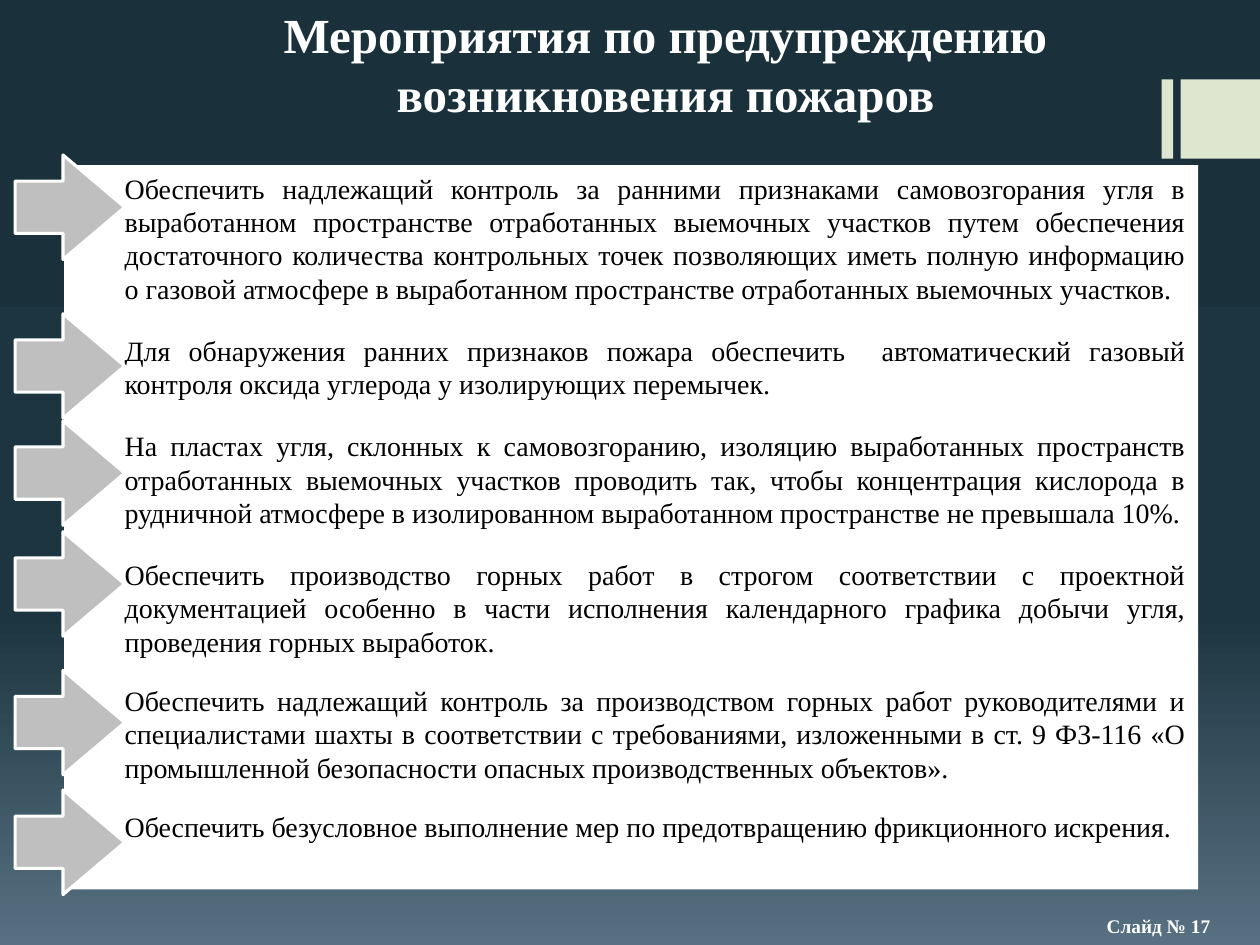
from copy import deepcopy

from pptx import Presentation
from pptx.dml.color import RGBColor
from pptx.enum.shapes import MSO_SHAPE
from pptx.enum.text import MSO_ANCHOR, PP_ALIGN
from pptx.util import Inches, Pt

COLORS = {
    "top": "1A313B", "mid": "1C3540", "low": "587182",
    "accent": "DFE6D0", "arrow": "BFBFBF",
    "white": "FFFFFF", "black": "000000",
}
FONT = "Times New Roman"
TITLE = "Мероприятия по предупреждению возникновения пожаров"

# Arrow top in inches, space before in points, text
ITEMS = [
    (1.23, 0, "Обеспечить надлежащий контроль за ранними признаками "
     "самовозгорания угля в выработанном пространстве отработанных выемочных "
     "участков путем обеспечения достаточного количества контрольных точек "
     "позволяющих иметь полную информацию о газовой атмосфере в выработанном "
     "пространстве отработанных выемочных участков."),
    (2.49, 16.3, "Для обнаружения ранних признаков пожара обеспечить  "
     "автоматический газовый контроля оксида углерода у изолирующих перемычек."),
    (3.34, 16.3, "На пластах угля, склонных к самовозгоранию, изоляцию "
     "выработанных пространств отработанных выемочных участков проводить так, "
     "чтобы концентрация кислорода в рудничной атмосфере в изолированном "
     "выработанном пространстве не превышала 10%."),
    (4.22, 16.3, "Обеспечить производство горных работ в строгом соответствии "
     "с проектной документацией особенно в части исполнения календарного "
     "графика добычи угля, проведения горных выработок."),
    (5.32, 14.6, "Обеспечить надлежащий контроль за производством горных работ "
     "руководителями и специалистами шахты в соответствии с требованиями, "
     "изложенными в ст. 9 ФЗ-116 «О промышленной безопасности опасных "
     "производственных объектов»."),
    (6.27, 14.6, "Обеспечить безусловное выполнение мер по предотвращению "
     "фрикционного искрения."),
]


def color(name):
    return RGBColor.from_string(COLORS[name])


def paint_back(slide):
    """Fill the background with a three-stop vertical gradient."""
    fill = slide.background.fill
    fill.gradient()
    fill.gradient_angle = 270
    stops = slide.element.xpath(".//a:gsLst")[0]
    stops.insert(1, deepcopy(stops[0]))
    for stop, name, place in zip(fill.gradient_stops,
                                 ("top", "mid", "low"), (0, 0.65, 1)):
        stop.color.rgb = color(name)
        stop.position = place


def add_box(slide, kind, box, fill, line=None):
    shape = slide.shapes.add_shape(kind, *map(Inches, box))
    shape.shadow.inherit = False
    shape.fill.solid()
    shape.fill.fore_color.rgb = color(fill)
    if line:
        shape.line.color.rgb = color(line)
        shape.line.width = Pt(1.75)
    else:
        shape.line.fill.background()
    return shape


def set_frame(shape, left=0.1, anchor=MSO_ANCHOR.TOP, wrap=True):
    frame = shape.text_frame
    frame.word_wrap = wrap
    frame.vertical_anchor = anchor
    frame.margin_left = Inches(left)
    return frame


def add_text(frame, text, size, hue="white", bold=False,
             align=PP_ALIGN.CENTER, before=0, pitch=None):
    """Write one paragraph, using the empty first one if it is free."""
    para = frame.paragraphs[0]
    if para.runs:
        para = frame.add_paragraph()
    para.alignment = align
    para.space_before = Pt(before)
    if pitch:
        para.line_spacing = Pt(pitch)
    run = para.add_run()
    run.text = text
    font = run.font
    font.name, font.size, font.bold = FONT, Pt(size), bold
    font.color.rgb = color(hue)


def add_arrow(slide, top):
    arrow = add_box(slide, MSO_SHAPE.RIGHT_ARROW, (0.12, top, 0.87, 0.83),
                    "arrow", line="white")
    arrow.adjustments[0] = 0.5
    arrow.adjustments[1] = 0.59


def add_label(slide, box, text, size, pitch=None, **layout):
    shape = slide.shapes.add_textbox(*map(Inches, box))
    add_text(set_frame(shape, **layout), text, size, bold=True, pitch=pitch)


def main():
    deck = Presentation()
    deck.slide_width, deck.slide_height = Inches(10), Inches(7.5)
    slide = deck.slides.add_slide(deck.slide_layouts[6])
    paint_back(slide)

    for left, width in ((9.22, 0.09), (9.37, 0.63)):
        add_box(slide, MSO_SHAPE.RECTANGLE, (left, 0.63, width, 0.63), "accent")

    panel = add_box(slide, MSO_SHAPE.RECTANGLE, (0.51, 1.31, 9, 5.75), "white")
    frame = set_frame(panel, left=0.48)
    for top, before, text in ITEMS:
        add_text(frame, text, 16, hue="black", align=PP_ALIGN.JUSTIFY,
                 before=before, pitch=19.1)
        add_arrow(slide, top)

    add_label(slide, (0.59, 0.05, 9, 0.97), TITLE, 28, pitch=33.8,
              left=0.48, anchor=MSO_ANCHOR.BOTTOM)
    add_label(slide, (8.66, 7.2, 1.07, 0.29), "Слайд № 17", 11,
              anchor=MSO_ANCHOR.MIDDLE, wrap=False)
    deck.save("out.pptx")


if __name__ == "__main__":
    main()
